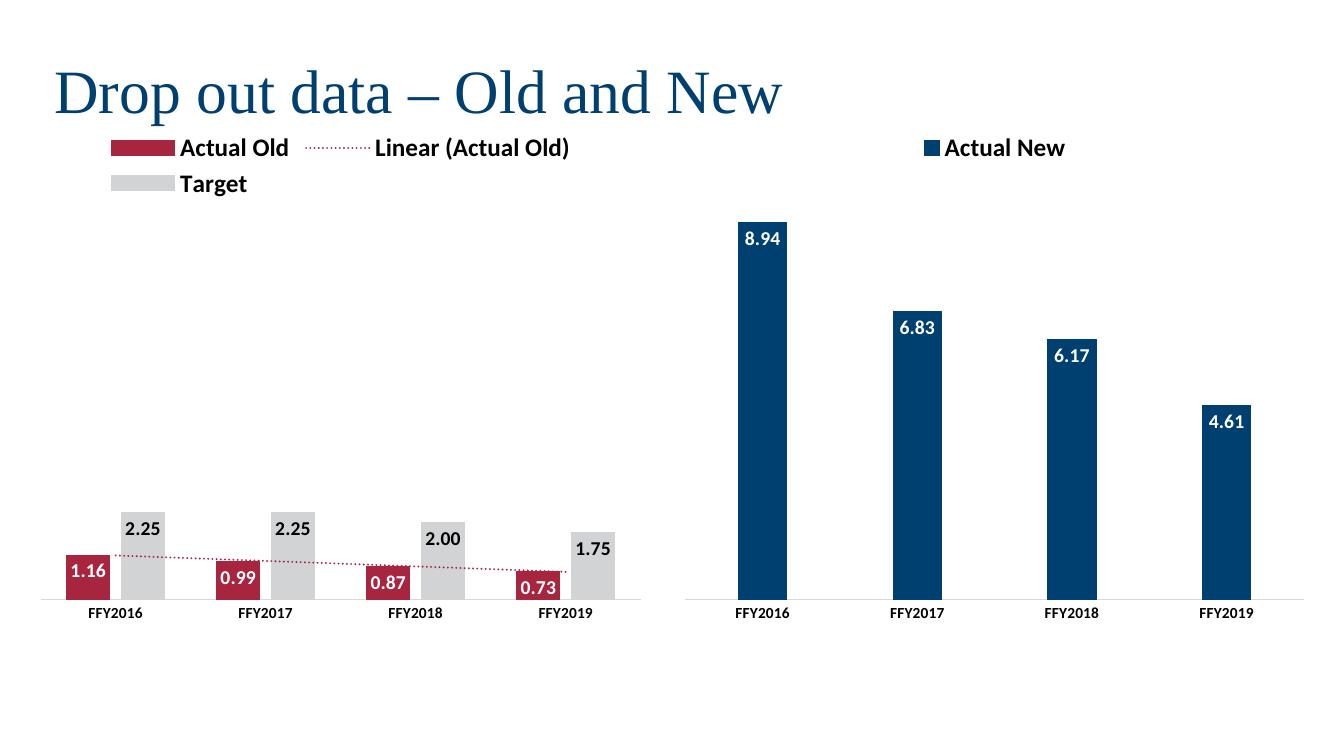
from lxml import etree
from pptx import Presentation
from pptx import util as u
from pptx.chart import data
from pptx.dml import color
from pptx.enum import chart as charts
from pptx.enum import text
from pptx.oxml import ns

COLORS = {
    "navy": "004071",
    "red": "A7253F",
    "silver": "D1D3D4",
    "axis": "D9D9D9",
    "black": "000000",
    "white": "FFFFFF",
}
YEARS = [f"FFY{year}" for year in range(2016, 2020)]


def rgb(name):
    return color.RGBColor.from_string(COLORS[name])


def set_font(font, size, tint="black", name="Calibri", bold=True):
    font.size = u.Pt(size)
    font.name = name
    font.bold = bold
    font.color.rgb = rgb(tint)


def write(box, words, align=text.PP_ALIGN.LEFT, anchor=text.MSO_ANCHOR.MIDDLE, spacing=0.9, **style):
    frame = box.text_frame
    frame.word_wrap = True
    frame.auto_size = text.MSO_AUTO_SIZE.NONE
    frame.vertical_anchor = anchor
    para = frame.paragraphs[0]
    para.alignment = align
    para.line_spacing = spacing
    span = para.add_run()
    span.text = words
    set_font(span.font, **style)


def add_trend(series_xml, tint):
    trend = etree.fromstring(
        f'<c:trendline xmlns:c="{ns.nsuri("c")}" xmlns:a="{ns.nsuri("a")}">'
        f'<c:spPr><a:ln w="{u.Pt(1.5)}" cap="rnd"><a:solidFill><a:srgbClr val="{COLORS[tint]}"/>'
        '</a:solidFill><a:prstDash val="sysDot"/></a:ln></c:spPr>'
        '<c:trendlineType val="linear"/><c:dispRSqr val="0"/><c:dispEq val="0"/></c:trendline>'
    )
    series_xml.find(ns.qn("c:cat")).addprevious(trend)


class Slide:
    def __init__(self, deck):
        self.deck = deck
        self.page = deck.slides.add_slide(deck.slide_layouts[5])

    def place(self, left, top, width, height):
        across, down = self.deck.slide_width / 100, self.deck.slide_height / 100
        return [u.Emu(round(n)) for n in (left * across, top * down, width * across, height * down)]

    def title(self, words, area):
        box = self.page.shapes.title
        box.left, box.top, box.width, box.height = self.place(*area)
        write(box, words, size=44, tint="navy", name="Times New Roman", bold=False)

    def columns(self, area, gap, rows, trended=()):
        values = data.CategoryChartData(number_format="0.00")
        values.categories = YEARS
        for name, numbers, _, _ in rows:
            values.add_series(name, numbers)
        chart = self.page.shapes.add_chart(
            charts.XL_CHART_TYPE.COLUMN_CLUSTERED, *self.place(*area), values
        ).chart
        set_font(chart.font, 10, bold=False)
        chart.has_title = False
        chart.has_legend = True
        chart.legend.position = charts.XL_LEGEND_POSITION.TOP
        chart.legend.include_in_layout = False
        set_font(chart.legend.font, 18)
        self.axes(chart)
        plot = chart.plots[0]
        plot.gap_width, plot.overlap, plot.vary_by_categories = gap, -27, False
        series_xml = chart.element.findall(".//" + ns.qn("c:ser"))
        for series, xml, (name, _, fill, label) in zip(plot.series, series_xml, rows):
            series.format.fill.solid()
            series.format.fill.fore_color.rgb = rgb(fill)
            series.format.line.color.rgb = rgb(fill)
            series.format.line.width = u.Pt(0.75)
            labels = series.data_labels
            labels.show_value = True
            labels.position = charts.XL_LABEL_POSITION.INSIDE_END
            labels.number_format = "0.00"
            labels.number_format_is_linked = False
            set_font(labels.font, 14, label)
            if name in trended:
                add_trend(xml, fill)

    def axes(self, chart):
        years, scale = chart.category_axis, chart.value_axis
        years.major_tick_mark = years.minor_tick_mark = charts.XL_TICK_MARK.NONE
        years.format.line.color.rgb = rgb("axis")
        years.format.line.width = u.Pt(0.75)
        set_font(years.tick_labels.font, 11)
        scale.minimum_scale, scale.maximum_scale = 0, 10
        scale.has_major_gridlines = False
        scale.visible = False


def main():
    deck = Presentation()
    deck.slide_width, deck.slide_height = u.Inches(13.33), u.Inches(7.5)
    slide = Slide(deck)
    slide.title("Drop out data – Old and New", (3.3, 2.13, 93.25, 20.4))
    top, height = 15.87, 67.87
    slide.columns(
        (2.1, top, 46.51, height),
        121,
        [
            ("Actual Old", (1.16, 0.99, 0.87, 0.73), "red", "white"),
            ("Target", (2.25, 2.25, 2, 1.75), "silver", "black"),
        ],
        trended=("Actual Old",),
    )
    slide.columns(
        (50.04, top, 47.94, height),
        219,
        [("Actual New", (8.94, 6.83, 6.17, 4.61), "navy", "white")],
    )
    deck.save("out.pptx")


if __name__ == "__main__":
    main()
